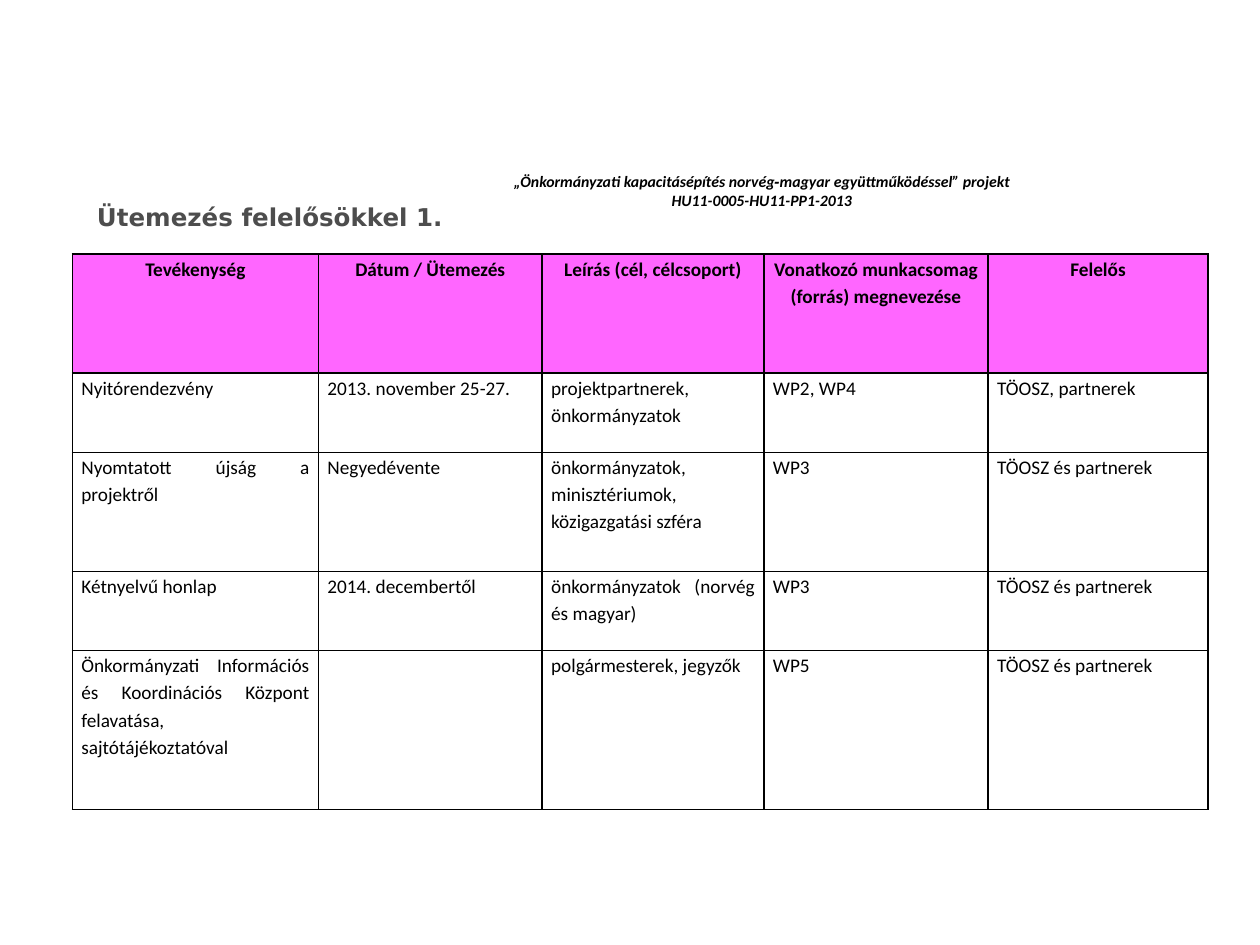
from lxml.etree import SubElement
from pptx import Presentation
from pptx.dml.color import RGBColor
from pptx.enum.text import MSO_ANCHOR, MSO_AUTO_SIZE, PP_ALIGN
from pptx.oxml.ns import qn
from pptx.util import Cm, Pt

COLORS = {
    "text": "000000",
    "title": "4D4D4D",
    "header": "FF66FF",
    "body": "FFFFFF",
    "border": "000000",
}
COLUMN_WIDTHS = [4.96, 4.51, 4.47, 4.52, 4.43]
ROW_HEIGHTS = [2.4, 1.6, 2.4, 1.6, 3.2]
SCHEDULE = [
    ["Tevékenység", "Dátum / Ütemezés", "Leírás (cél, célcsoport)",
     "Vonatkozó munkacsomag (forrás) megnevezése", "Felelős"],
    ["Nyitórendezvény", "2013. november 25-27.", "projektpartnerek, önkormányzatok",
     "WP2, WP4", "TÖOSZ, partnerek"],
    ["Nyomtatott újság a projektről", "Negyedévente",
     "önkormányzatok, minisztériumok, közigazgatási szféra", "WP3", "TÖOSZ és partnerek"],
    ["Kétnyelvű honlap", "2014. decembertől", "önkormányzatok (norvég és magyar)",
     "WP3", "TÖOSZ és partnerek"],
    ["Önkormányzati Információs és Koordinációs Központ felavatása, sajtótájékoztatóval",
     "", "polgármesterek, jegyzők", "WP5", "TÖOSZ és partnerek"],
]


def write_text(frame, text, size, font="Calibri", color="text", bold=False,
               italic=False, align=PP_ALIGN.LEFT, spacing=None):
    """Fill a text frame, one paragraph for each line of text."""
    for index, line in enumerate(text.split("\n")):
        para = frame.add_paragraph() if index else frame.paragraphs[0]
        para.alignment = align
        para.line_spacing = spacing
        span = para.add_run()
        span.text = line
        span.font.name = font
        span.font.size = Pt(size)
        span.font.bold = bold
        span.font.italic = italic
        span.font.color.rgb = RGBColor.from_string(COLORS[color])


def fit_to_text(frame, anchor):
    frame.word_wrap = False
    frame.auto_size = MSO_AUTO_SIZE.SHAPE_TO_FIT_TEXT
    frame.vertical_anchor = anchor


def add_project_name(page, left, top, width, height):
    box = page.shapes.add_textbox(left, top, width, height)
    fit_to_text(box.text_frame, MSO_ANCHOR.MIDDLE)
    write_text(
        box.text_frame,
        "„Önkormányzati kapacitásépítés norvég‐magyar együttműködéssel” projekt\n"
        "HU11-0005-HU11-PP1-2013",
        9, bold=True, italic=True, align=PP_ALIGN.CENTER)


def place_title(page, left, top, width, height):
    title = page.shapes.title
    title.left, title.top, title.width, title.height = left, top, width, height
    fit_to_text(title.text_frame, MSO_ANCHOR.TOP)
    write_text(title.text_frame, "Ütemezés felelősökkel 1.", 14,
               font="DejaVu Sans", color="title", bold=True)


def set_borders(cell):
    """Draw all four sides; the lines must precede the cell's fill."""
    properties = cell._tc.get_or_add_tcPr()
    for side in ("a:lnL", "a:lnR", "a:lnT", "a:lnB"):
        line = SubElement(properties, qn(side), w=str(Pt(1)))
        fill = SubElement(line, qn("a:solidFill"))
        SubElement(fill, qn("a:srgbClr"), val=COLORS["border"])


def format_cell(cell, text, is_header):
    cell.margin_left = cell.margin_right = Cm(0.18)
    cell.margin_top = cell.margin_bottom = 0
    set_borders(cell)
    cell.fill.solid()
    cell.fill.fore_color.rgb = RGBColor.from_string(
        COLORS["header" if is_header else "body"])
    if text:
        write_text(cell.text_frame, text, 11, bold=is_header, spacing=1.15,
                   align=PP_ALIGN.CENTER if is_header else PP_ALIGN.JUSTIFY)


def add_schedule(page, left, top, width, height):
    table = page.shapes.add_table(len(ROW_HEIGHTS), len(COLUMN_WIDTHS),
                                  left, top, width, height).table
    table.first_row = table.horz_banding = False
    for column, share in zip(table.columns, COLUMN_WIDTHS):
        column.width = int(width * share / sum(COLUMN_WIDTHS))
    for index, (row, share) in enumerate(zip(table.rows, ROW_HEIGHTS)):
        row.height = int(height * share / sum(ROW_HEIGHTS))
        for cell, text in zip(row.cells, SCHEDULE[index]):
            format_cell(cell, text, is_header=index == 0)


def main():
    deck = Presentation()
    deck.slide_width, deck.slide_height = Cm(25.4), Cm(19.05)
    page = deck.slides.add_slide(deck.slide_layouts.get_by_name("Title Only"))
    add_project_name(page, Cm(9.32), Cm(3.33), Cm(12.07), Cm(1.02))
    add_schedule(page, Cm(1.46), Cm(5.12), Cm(22.89), Cm(11.2))
    place_title(page, Cm(1.7), Cm(3.94), Cm(7.49), Cm(0.86))
    deck.save("out.pptx")


if __name__ == "__main__":
    main()
